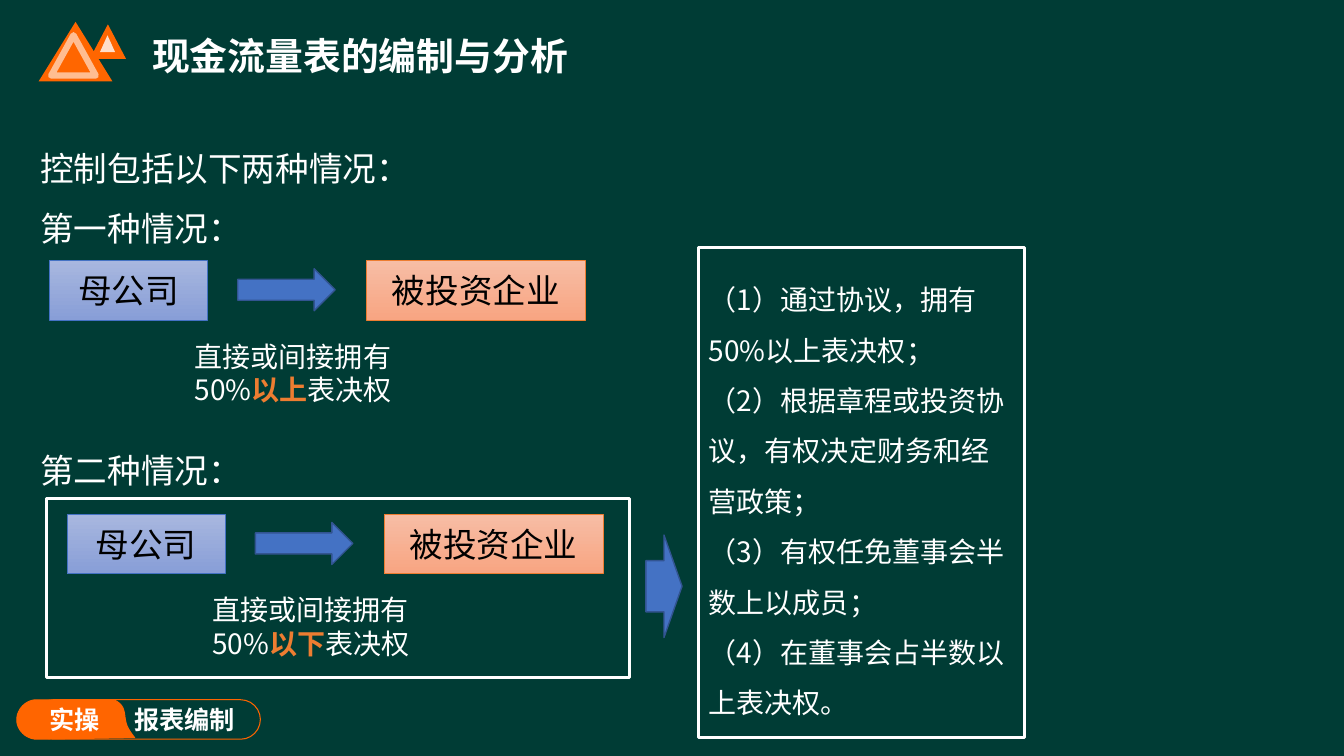
from pptx import Presentation
from pptx.dml.color import RGBColor as Rgb
from pptx.enum.shapes import MSO_SHAPE as Kind
from pptx.enum.text import MSO_ANCHOR as Anchor, PP_ALIGN as Align
from pptx.oxml.ns import qn
from pptx.util import Inches, Pt
from dataclasses import dataclass
from lxml.etree import SubElement as Sub


@dataclass(frozen=True)
class Theme:
    font: str = "Noto Sans CJK SC"
    back: str = "003C35"
    white: str = "FFFFFF"
    black: str = "000000"
    flame: str = "FF6500"
    peak: str = "FF6600"
    blue: str = "4472C4"
    navy: str = "325491"
    orange: str = "ED7D31"
    cool: tuple = ("A8B7DF", "889ED7")
    warm: tuple = ("F7BDA5", "F8A582")
    title: int = 27
    head: int = 24
    note: int = 20
    tag: int = 18


T = Theme()
WIDE, HIGH = Inches(13.33), Inches(7.5)
COLS, ROWS = 16, 9


def grid(x, y, w, h):
    """Turn columns and rows into slide lengths."""
    col, row = WIDE / COLS, HIGH / ROWS
    return [round(v) for v in (x * col, y * row, w * col, h * row)]


def fade(fill, share):
    """Make a solid fill see-through; share is its opacity in percent."""
    tint = fill._xPr.find(qn("a:solidFill"))[0]
    Sub(tint, qn("a:alpha"), val=str(share * 1000))


def write(shape, paras, size, color=T.white, bold=False, align=Align.LEFT,
          anchor=Anchor.TOP, lead=None, inset=None):
    """Fill a shape with paragraphs; each is a string or a list of (text, accent)."""
    frame = shape.text_frame
    frame.word_wrap = True
    frame.vertical_anchor = anchor
    if inset is not None:
        frame.margin_left = round(inset * WIDE / COLS)
        frame.margin_right = 0
    for i, parts in enumerate(paras):
        para = frame.paragraphs[0] if i == 0 else frame.add_paragraph()
        para.alignment = align
        if lead:
            para.line_spacing = lead
        for text, accent in [(parts, None)] if isinstance(parts, str) else parts:
            run = para.add_run()
            run.text = text
            font = run.font
            font.size, font.name = Pt(size), T.font
            font.bold = bold or bool(accent)
            font.color.rgb = Rgb.from_string(accent or color)
            Sub(font._element, qn("a:ea"), typeface=T.font)
    return frame


def paint(shape, fill=None, line=None, width=1):
    """Set fill (none, one colour or a pair to blend) and outline."""
    shape.shadow.inherit = False
    if fill is None:
        shape.fill.background()
    elif isinstance(fill, tuple):
        shape.fill.gradient()
        shape.fill.gradient_angle = 270
        for stop, tint in zip(shape.fill.gradient_stops, fill):
            stop.color.rgb = Rgb.from_string(tint)
    else:
        shape.fill.solid()
        shape.fill.fore_color.rgb = Rgb.from_string(fill)
    if line:
        shape.line.color.rgb = Rgb.from_string(line)
        shape.line.width = Pt(width)
    else:
        shape.line.fill.background()
    return shape


def block(slide, kind, spot, **look):
    return paint(slide.shapes.add_shape(kind, *grid(*spot)), **look)


def label(slide, spot, paras, size, **form):
    return write(slide.shapes.add_textbox(*grid(*spot)), paras, size, **form)


def arrow(slide, spot):
    block(slide, Kind.RIGHT_ARROW, spot, fill=T.blue, line=T.navy)


def bend(a, b, c, d, steps=12):
    """Points along a cubic curve."""
    for i in range(1, steps + 1):
        t = i / steps
        u = 1 - t
        yield tuple(u**3 * p + 3 * u * u * t * q + 3 * u * t * t * r + t**3 * s
                    for p, q, r, s in zip(a, b, c, d))


def badge(slide):
    top, mid, low = 8.33, 8.57, 8.8
    nook, rim, tip = (1.5, 8.6), (1.44, 8.39), (1.62, low)
    dots = [nook,
            *bend(nook, (1.48, 8.52), (1.49, 8.45), rim),
            *bend(rim, (1.4, 8.35), (1.37, top), (1.32, top)),
            *bend((0.44, top), (0.31, top), (0.2, 8.44), (0.2, mid)),
            *bend((0.2, mid), (0.2, 8.69), (0.31, low), (0.44, low)),
            *bend(tip, (1.55, 8.72), (1.51, 8.65), nook)]
    dots = [grid(x, y, 0, 0)[:2] for x, y in dots]
    pen = slide.shapes.build_freeform(*dots[0])
    pen.add_line_segments(dots[1:], close=True)
    tab = paint(pen.convert_to_shape(), fill=T.flame, line=T.flame, width=0.75)
    pill = block(slide, Kind.ROUNDED_RECTANGLE, (0.4, top, 2.7, 0.47),
                 line=T.flame, width=0.75)
    pill.adjustments[0] = 0.5
    form = dict(bold=True, anchor=Anchor.MIDDLE)
    write(tab, ["实操"], T.tag, inset=0.39, **form)
    write(pill, ["报表编制"], T.tag, inset=1.13, **form)


def peaks(slide):
    kind = Kind.FLOWCHART_EXTRACT
    for spot in (0.46, 0.26, 0.88, 0.71), (1.07, 0.29, 0.43, 0.41):
        block(slide, kind, spot, fill=T.peak)
    ring = block(slide, kind, (0.61, 0.42, 0.53, 0.48), fill=T.peak,
                 line=T.white, width=4.5)
    fade(ring.line.fill, 57)
    Sub(ring.line._ln, qn("a:round"))
    snow = block(slide, kind, (1.19, 0.42, 0.18, 0.2), fill=T.white)
    fade(snow.fill, 79)


def case(slide, x, y, key):
    """Parent company, arrow and investee, with the share of votes below."""
    for name, dx, w, fill, line in (("母公司", 0, 1.88, T.cool, T.blue),
                                    ("被投资企业", 3.77, 2.61, T.warm, T.orange)):
        box = block(slide, Kind.RECTANGLE, (x + dx, y, w, 0.71),
                    fill=fill, line=line, width=0.5)
        write(box, [name], T.head, color=T.black, align=Align.CENTER,
              anchor=Anchor.MIDDLE)
    arrow(slide, (x + 2.24, y + 0.1, 1.16, 0.5))
    label(slide, (x + 1.61, y + 0.88, 2.78, 0.92),
          [[("直接或间接拥有50%", None), (key, T.orange), ("表决权", None)]], T.note)


def main():
    deck = Presentation()
    deck.slide_width, deck.slide_height = WIDE, HIGH
    slide = deck.slides.add_slide(deck.slide_layouts[5])
    slide.background.fill.solid()
    slide.background.fill.fore_color.rgb = Rgb.from_string(T.back)
    badge(slide)
    peaks(slide)

    title = slide.shapes.title
    title.left, title.top, title.width, title.height = grid(1.69, 0.22, 11.02, 0.89)
    write(title, ["现金流量表的编制与分析"], T.title, bold=True, anchor=Anchor.MIDDLE)

    heads = label(slide, (0.36, 1.46, 10.32, 6.96),
                  ["控制包括以下两种情况：", "第一种情况：", "第二种情况："],
                  T.head, lead=1.5)
    heads.paragraphs[2].space_before = Pt(3 * 1.2 * 1.5 * T.head)

    case(slide, 0.59, 3.1, "以上")
    case(slide, 0.8, 6.12, "以下")
    block(slide, Kind.RECTANGLE, (0.55, 5.93, 6.94, 2.14), line=T.white, width=2.25)
    arrow(slide, (7.69, 6.37, 0.43, 1.22))
    ways = block(slide, Kind.RECTANGLE, (8.32, 2.95, 3.88, 5.83),
                 line=T.white, width=2.25)
    write(ways, ["（1）通过协议，拥有50%以上表决权；",
                 "（2）根据章程或投资协议，有权决定财务和经营政策；",
                 "（3）有权任免董事会半数上以成员；",
                 "（4）在董事会占半数以上表决权。"],
          T.note, anchor=Anchor.MIDDLE, lead=1.5)
    deck.save("out.pptx")


if __name__ == "__main__":
    main()
